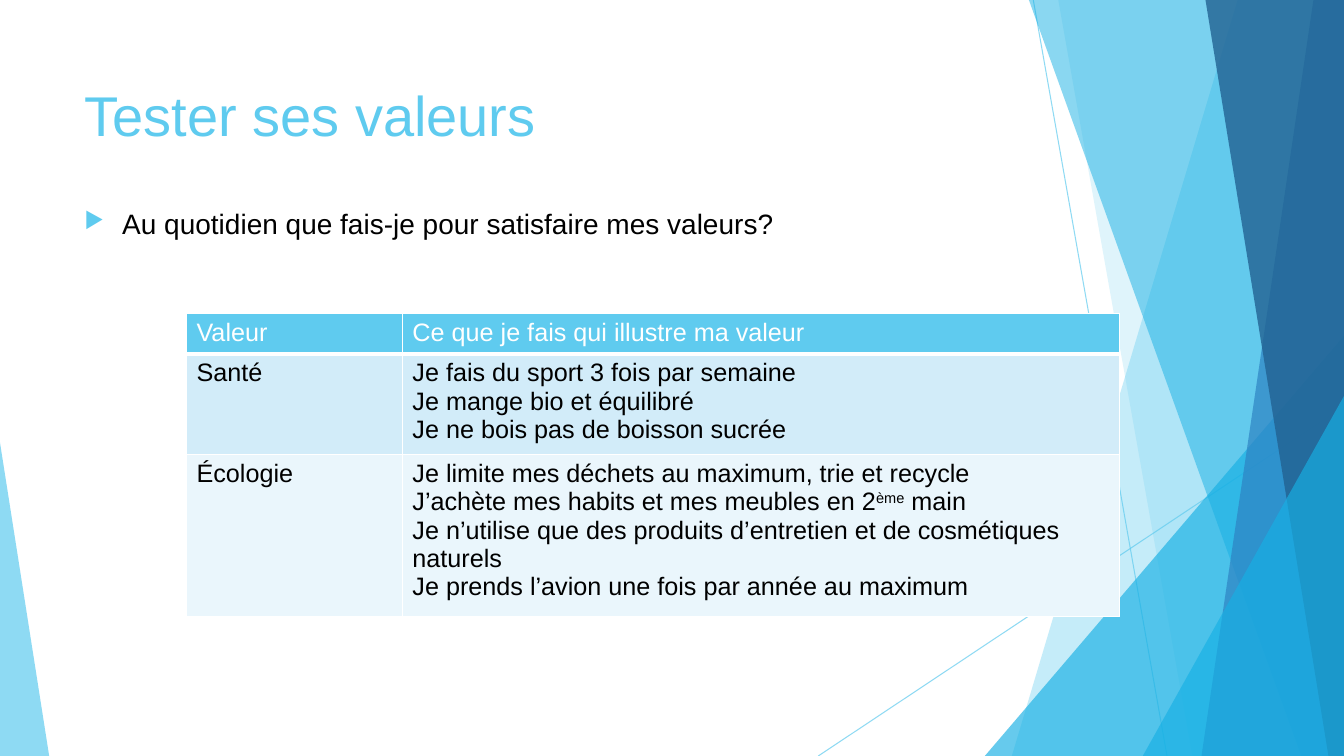
"""Build the slide on testing one's values."""
from pptx import Presentation
from pptx.dml.color import RGBColor
from pptx.enum import shapes, text
from pptx.oxml import parse_xml
from pptx.oxml.ns import nsdecls
from pptx.util import Cm, Pt

FONT = "Arial"
SKY, AZURE, BLUE, NAVY = "5FCBEF", "17B0E4", "2E83C3", "226292"
WHITE, BLACK = "FFFFFF", "000000"
WIDTH, HEIGHT = 33.87, 19.05

TITLE = "Tester ses valeurs"
QUESTION = "Au quotidien que fais-je pour satisfaire mes valeurs?"
HEADINGS = ("Valeur", "Ce que je fais qui illustre ma valeur")
VALUES = [
    ("Santé", [
        "Je fais du sport 3 fois par semaine",
        "Je mange bio et équilibré",
        "Je ne bois pas de boisson sucrée",
    ]),
    ("Écologie", [
        "Je limite mes déchets au maximum, trie et recycle",
        ("J’achète mes habits et mes meubles en 2", "ème", " main"),
        "Je n’utilise que des produits d’entretien et de cosmétiques naturels",
        "Je prends l’avion une fois par année au maximum",
    ]),
]
COLUMN_WIDTHS = (5.44, 18.08)
ROW_HEIGHTS = (1.02, 2.39, 3.81)
ROW_FILLS = (SKY, "D2ECF9", "EAF6FC")

RAYS = [((26.04, 0), (29.41, HEIGHT)), ((WIDTH, 10.24), (20.62, HEIGHT))]
FACETS = [
    ("panel", 31.19, 25.5, SKY, 36),
    ("panel", 26.67, 30.05, SKY, 20),
    ("corner", 24.82, 8.46, AZURE, 66),
    ("panel", 25.93, 32.79, AZURE, 50),
    ("panel", 33.1, 30.28, BLUE, 70),
    ("panel", 30.38, 33.48, NAVY, 80),
    ("corner", 28.8, 9.98, AZURE, 66),
]


def rgb(color):
    return RGBColor.from_string(color)


def set_alpha(fill_parent, percent):
    for color in fill_parent.iter("{*}srgbClr"):
        color.append(parse_xml(f'<a:alpha {nsdecls("a")} val="{percent * 1000}"/>'))


def add_run(paragraph, wording, size, color):
    run = paragraph.add_run()
    run.text = wording
    run.font.name = FONT
    run.font.size = Pt(size)
    run.font.bold = False
    run.font.color.rgb = rgb(color)
    return run


def paint(facet, color, percent):
    facet.shadow.inherit = False
    facet.fill.solid()
    facet.fill.fore_color.rgb = rgb(color)
    set_alpha(facet._element.spPr, percent)
    facet.line.fill.background()


def add_ray(slide, start, end):
    ray = slide.shapes.add_connector(
        shapes.MSO_CONNECTOR.STRAIGHT, *map(Cm, start + end))
    ray.line.color.rgb = rgb(SKY)
    ray.line.width = Pt(0.75)
    set_alpha(ray._element.spPr, 70)
    ray._element.spPr.append(parse_xml(f'<a:effectLst {nsdecls("a")}/>'))


def add_panel(slide, top_x, bottom_x, color, percent):
    outline = slide.shapes.build_freeform(Cm(top_x), 0)
    corners = [(WIDTH, 0), (WIDTH, HEIGHT), (bottom_x, HEIGHT)]
    outline.add_line_segments([(Cm(x), Cm(y)) for x, y in corners], close=True)
    paint(outline.convert_to_shape(), color, percent)


def add_corner(slide, left, top, width, apex, color, percent):
    corner = slide.shapes.add_shape(
        shapes.MSO_SHAPE.ISOSCELES_TRIANGLE,
        Cm(left), Cm(top), Cm(width), Cm(HEIGHT - top))
    corner.adjustments[0] = apex
    paint(corner, color, percent)


def add_decor(slide):
    for start, end in RAYS:
        add_ray(slide, start, end)
    for kind, first, second, color, percent in FACETS:
        if kind == "panel":
            add_panel(slide, first, second, color, percent)
        else:
            add_corner(slide, first, second, WIDTH - first, 1, color, percent)
    add_corner(slide, 0, 11.15, 1.24, 0, SKY, 70)


def add_title(slide):
    title = slide.shapes.title
    title.left, title.top, title.width, title.height = map(Cm, (1.88, 1.7, 23.88, 2.54))
    frame = title.text_frame
    frame.vertical_anchor = text.MSO_ANCHOR.TOP
    frame.margin_top = Cm(0.32)
    frame.paragraphs[0].alignment = text.PP_ALIGN.LEFT
    add_run(frame.paragraphs[0], TITLE, 40, SKY)


def add_question(slide):
    question = slide.shapes.add_textbox(Cm(1.88), Cm(5.08), Cm(27.28), Cm(10.77))
    frame = question.text_frame
    frame.word_wrap = True
    paragraph = frame.paragraphs[0]
    add_run(paragraph, QUESTION, 20, BLACK)
    properties = paragraph._p.get_or_add_pPr()
    properties.set("marL", str(Cm(0.95)))
    properties.set("indent", str(-Cm(0.95)))
    for bullet in (f'<a:buClr {nsdecls("a")}><a:srgbClr val="{SKY}"/></a:buClr>',
                   f'<a:buSzPct {nsdecls("a")} val="80000"/>',
                   f'<a:buChar {nsdecls("a")} char="▶"/>'):
        properties.append(parse_xml(bullet))


def fill_cell(cell, lines, color, fill, bottom_width):
    for index, line in enumerate(lines):
        frame = cell.text_frame
        paragraph = frame.add_paragraph() if index else frame.paragraphs[0]
        pieces = (line,) if isinstance(line, str) else line
        for position, piece in enumerate(pieces):
            run = add_run(paragraph, piece, 18, color)
            if position == 1:
                run.font._element.set("baseline", "30000")
    for side, width in (("L", 1), ("R", 1), ("T", 1), ("B", bottom_width)):
        cell._tc.get_or_add_tcPr().append(parse_xml(
            f'<a:ln{side} {nsdecls("a")} w="{Pt(width)}"><a:solidFill>'
            f'<a:srgbClr val="{WHITE}"/></a:solidFill></a:ln{side}>'))
    cell.fill.solid()
    cell.fill.fore_color.rgb = rgb(fill)


def add_values(slide):
    rows = [[[heading] for heading in HEADINGS]]
    rows += [[[value], actions] for value, actions in VALUES]
    table = slide.shapes.add_table(
        len(rows), len(HEADINGS), Cm(4.7), Cm(7.9),
        Cm(sum(COLUMN_WIDTHS)), Cm(sum(ROW_HEIGHTS))).table
    for column, width in zip(table.columns, COLUMN_WIDTHS):
        column.width = Cm(width)
    for r, (cells, height, fill) in enumerate(zip(rows, ROW_HEIGHTS, ROW_FILLS)):
        table.rows[r].height = Cm(height)
        for c, lines in enumerate(cells):
            fill_cell(table.cell(r, c), lines, BLACK if r else WHITE, fill, 1 if r else 3)


def main():
    deck = Presentation()
    deck.slide_width, deck.slide_height = Cm(WIDTH), Cm(HEIGHT)
    slide = deck.slides.add_slide(deck.slide_layouts[5])
    add_decor(slide)
    add_title(slide)
    add_question(slide)
    add_values(slide)
    deck.save("out.pptx")


if __name__ == "__main__":
    main()
